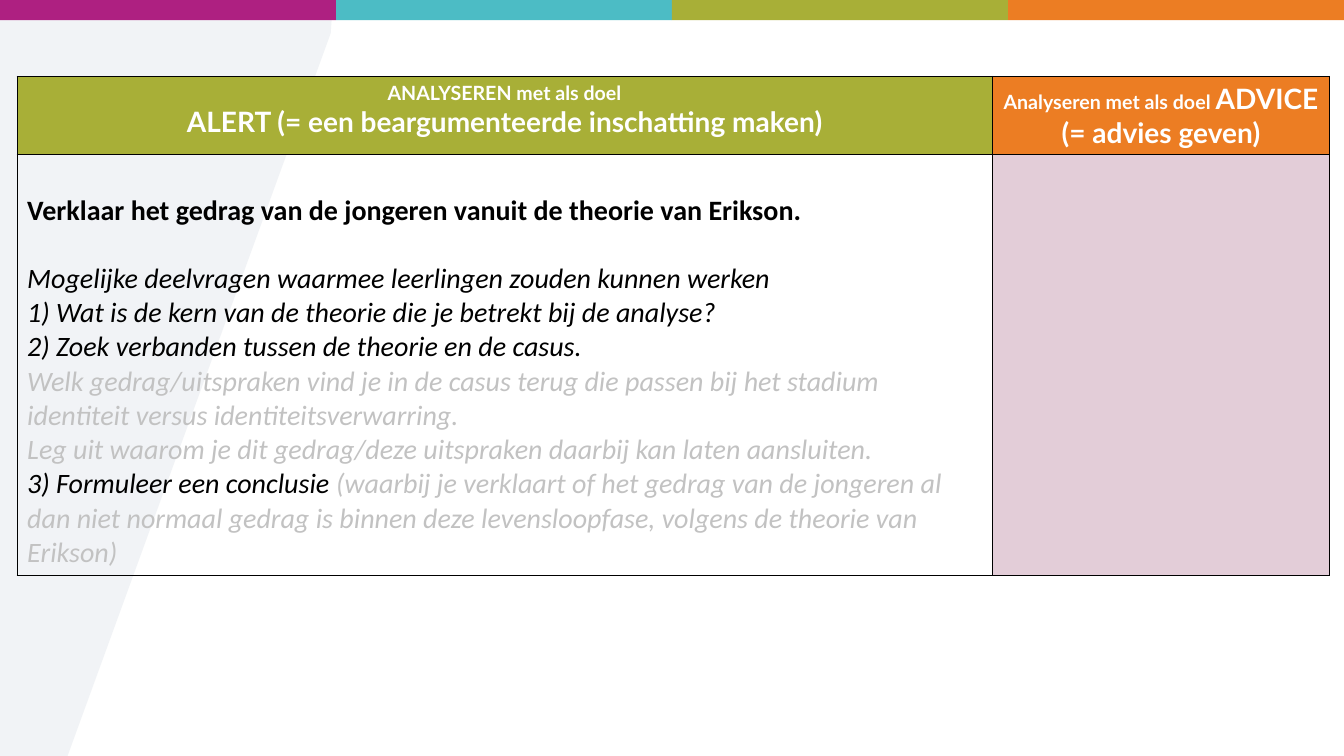
from dataclasses import dataclass

from lxml import etree
from pptx import Presentation
from pptx.dml.color import RGBColor
from pptx.enum.shapes import MSO_SHAPE
from pptx.enum.text import PP_ALIGN
from pptx.oxml.ns import qn
from pptx.util import Inches, Pt

RECTANGLE = MSO_SHAPE.RECTANGLE
LEFT, CENTER = PP_ALIGN.LEFT, PP_ALIGN.CENTER
WIDTH, HEIGHT = 13.33, 7.5
BLANK_LAYOUT = 6


@dataclass(frozen=True)
class Theme:
    bands: tuple = ("AE2081", "4CBCC5", "A8AF37", "EC7D23")
    backdrop: str = "E8ECF0"
    backdrop_alpha: int = 59
    alert: str = "A8AF37"
    advice: str = "EC7D23"
    answer: str = "E3CDD8"
    white: str = "FFFFFF"
    black: str = "000000"
    muted: str = "C2C2C2"
    header_font: str = "Lato"
    body_font: str = "Calibri"
    small: int = 14
    large: int = 20
    blank_line: int = 24
    border: int = 1


THEME = Theme()


def paint(fill, color):
    fill.solid()
    fill.fore_color.rgb = RGBColor.from_string(color)


def finish_shape(shape, color):
    paint(shape.fill, color)
    shape.line.fill.background()
    shape.shadow.inherit = False


def add_backdrop(slide):
    """Pale slanted panel along the left edge."""
    outline = slide.shapes.build_freeform(0, Inches(0.05), scale=1.0)
    corners = ((3.09, 0.05), (3.22, 0.09), (3.29, 0.18), (3.28, 0.33),
               (0.67, HEIGHT), (0, HEIGHT))
    outline.add_line_segments([(Inches(x), Inches(y)) for x, y in corners])
    panel = outline.convert_to_shape()
    finish_shape(panel, THEME.backdrop)
    color = panel.fill._xPr.find(qn("a:solidFill"))[0]
    alpha = etree.SubElement(color, qn("a:alpha"))
    alpha.set("val", str(THEME.backdrop_alpha * 1000))


def add_bands(slide):
    """Row of equal colour bands along the top edge."""
    band_width = WIDTH / len(THEME.bands)
    for column, color in enumerate(THEME.bands):
        band = slide.shapes.add_shape(
            RECTANGLE, Inches(column * band_width), 0,
            Inches(band_width), Inches(0.2))
        finish_shape(band, color)


def add_borders(cell):
    properties = cell._tc.get_or_add_tcPr()
    for position, side in enumerate(("lnL", "lnR", "lnT", "lnB")):
        line = etree.Element(qn(f"a:{side}"), w=str(Pt(THEME.border)))
        solid = etree.SubElement(line, qn("a:solidFill"))
        etree.SubElement(solid, qn("a:srgbClr"), val=THEME.black)
        properties.insert(position, line)


def format_cell(cell, color=None):
    if color:
        paint(cell.fill, color)
    else:
        cell.fill.background()
    add_borders(cell)


def add_spans(para, spans, font, align=LEFT, bold=False, italic=False):
    """Fill a paragraph with (text, size, colour) spans."""
    para.alignment = align
    for text, size, color in spans:
        span = para.add_run()
        span.text = text
        span.font.name = font
        span.font.size = Pt(size)
        span.font.bold = bold
        span.font.italic = italic
        span.font.color.rgb = RGBColor.from_string(color)


def next_para(cell, index):
    frame = cell.text_frame
    return frame.add_paragraph() if index else frame.paragraphs[0]


def write_header(cell, color, lines):
    format_cell(cell, color)
    for index, line in enumerate(lines):
        spans = [(text, size, THEME.white) for text, size in line]
        add_spans(next_para(cell, index), spans, THEME.header_font,
                  CENTER, bold=True)


def write_questions(cell, question, steps):
    """Bold main question, then the sub-questions in italics."""
    format_cell(cell)
    cell.margin_top = Inches(0.39)
    add_spans(next_para(cell, 0), [(question, THEME.large, THEME.black)],
              THEME.body_font, bold=True)
    for index, step in enumerate(steps, start=1):
        para = next_para(cell, index)
        if index == 1:
            para.space_before = Pt(THEME.blank_line)
        spans = [(text, THEME.large, color) for text, color in step]
        add_spans(para, spans, THEME.body_font, italic=True)


def add_analysis_table(slide):
    columns, rows = (9.67, 3.35), (0.77, 4.18)
    frame = slide.shapes.add_table(
        len(rows), len(columns), Inches(0.17), Inches(0.76),
        Inches(sum(columns)), Inches(sum(rows)))
    table = frame.table
    table.first_row = table.horz_banding = False
    for column, width in zip(table.columns, columns):
        column.width = Inches(width)
    for row, height in zip(table.rows, rows):
        row.height = Inches(height)

    # Headers
    write_header(table.cell(0, 0), THEME.alert, [
        [("ANALYSEREN met als doel", THEME.small)],
        [("ALERT (= een beargumenteerde inschatting maken)", THEME.large)],
    ])
    write_header(table.cell(0, 1), THEME.advice, [
        [("Analyseren met als doel ", THEME.small),
         ("ADVICE (= advies geven)", THEME.large)],
    ])

    # Questions and the empty advice cell
    black, muted = THEME.black, THEME.muted
    write_questions(
        table.cell(1, 0),
        "Verklaar het gedrag van de jongeren vanuit de theorie van Erikson.",
        [
            [("Mogelijke deelvragen waarmee leerlingen zouden kunnen werken",
              black)],
            [("1) Wat is de kern van de theorie die je betrekt bij de "
              "analyse?", black)],
            [("2) Zoek verbanden tussen de theorie en de casus.", black)],
            [("Welk gedrag/uitspraken vind je in de casus terug die passen "
              "bij het stadium identiteit versus identiteitsverwarring.",
              muted)],
            [("Leg uit waarom je dit gedrag/deze uitspraken daarbij kan "
              "laten aansluiten.", muted)],
            [("3) Formuleer een conclusie ", black),
             ("(waarbij je verklaart of het gedrag van de jongeren al dan "
              "niet normaal gedrag is binnen deze levensloopfase, volgens "
              "de theorie van Erikson)", muted)],
        ])
    format_cell(table.cell(1, 1), THEME.answer)


def main():
    deck = Presentation()
    deck.slide_width, deck.slide_height = Inches(WIDTH), Inches(HEIGHT)
    slide = deck.slides.add_slide(deck.slide_layouts[BLANK_LAYOUT])
    paint(slide.background.fill, THEME.white)
    add_backdrop(slide)
    add_bands(slide)
    add_analysis_table(slide)
    deck.save("out.pptx")


if __name__ == "__main__":
    main()
